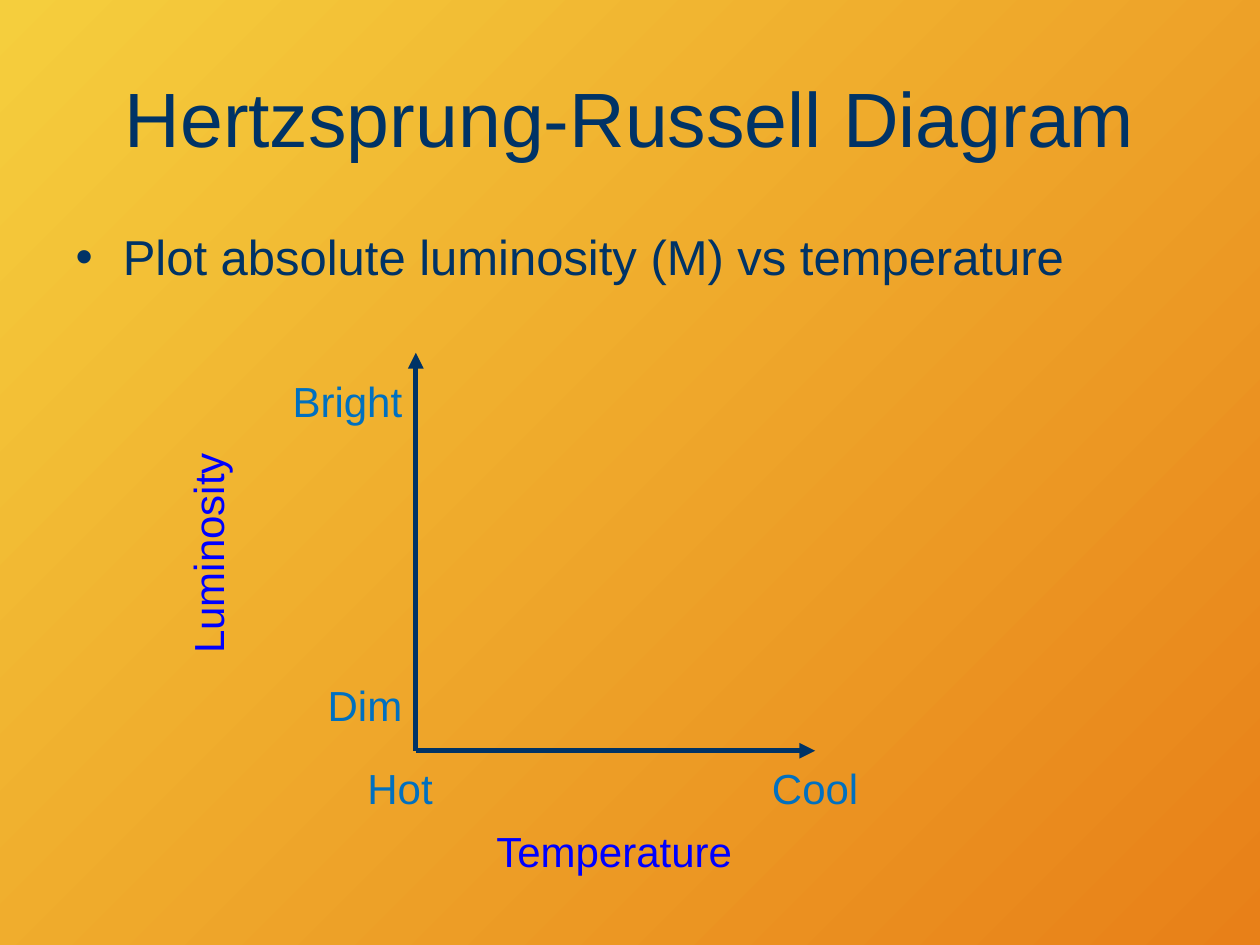
"""Build a slide that introduces the axes of the Hertzsprung-Russell diagram."""
from dataclasses import dataclass

from lxml import etree
from pptx import Presentation
from pptx.dml.color import RGBColor
from pptx.enum import shapes, text
from pptx.oxml import ns
from pptx.util import Pt

FONT = "Arial"
COLORS = {
    "yellow": "F5CE3D",
    "orange": "E88018",
    "navy": "003366",
    "axis_name": "0000FF",
    "axis_end": "0070C0",
}
ORIGIN = (237.6, 429)
LABEL_HEIGHT = 36
ALIGN = text.PP_ALIGN


@dataclass(frozen=True)
class Label:
    """A one-line axis label, placed in points."""
    words: str
    left: float
    top: float
    width: float
    color: str
    align: text.PP_ALIGN = ALIGN.LEFT
    rotation: float = 0


LABELS = [
    Label("Temperature", 276.5, 468, 150.5, "axis_name"),
    Label("Luminosity", 53.3, 297.5, 130.3, "axis_name", rotation=270),
    Label("Bright", 159, 211, 78, "axis_end", ALIGN.RIGHT),
    Label("Dim", 179.4, 384.5, 57.6, "axis_end", ALIGN.RIGHT),
    Label("Hot", 202.3, 432, 52.6, "axis_end", ALIGN.CENTER),
    Label("Cool", 433.4, 432, 64.8, "axis_end", ALIGN.CENTER),
]
AXIS_TIPS = [(ORIGIN[0], 201.6), (465.8, ORIGIN[1])]


def rgb(name: str) -> RGBColor:
    """Return a palette colour."""
    return RGBColor.from_string(COLORS[name])


def add_run(p, words: str, size: float, color: str) -> None:
    """Append a formatted run to a paragraph."""
    r = p.add_run()
    r.text = words
    r.font.name = FONT
    r.font.size = Pt(size)
    r.font.color.rgb = rgb(color)


def fill_placeholder(sp, top: float, words: str, size: float) -> None:
    """Move a full-width placeholder and write its text."""
    sp.left, sp.top, sp.width, sp.height = Pt(36), Pt(top), Pt(648), Pt(90)
    add_run(sp.text_frame.paragraphs[0], words, size, "navy")


def add_axis(s, tip: tuple[float, float]) -> None:
    """Draw an arrow from the origin to the tip."""
    ends = [Pt(v) for v in (*ORIGIN, *tip)]
    sp = s.shapes.add_connector(shapes.MSO_CONNECTOR.STRAIGHT, *ends)
    sp.line.color.rgb = rgb("navy")
    sp.line.width = Pt(3)
    props = sp._element.spPr
    etree.SubElement(props.find(ns.qn("a:ln")), ns.qn("a:tailEnd"), type="triangle")
    etree.SubElement(props, ns.qn("a:effectLst"))


def add_label(s, label: Label) -> None:
    """Add an axis label as a text box."""
    sp = s.shapes.add_textbox(
        Pt(label.left), Pt(label.top), Pt(label.width), Pt(LABEL_HEIGHT))
    sp.rotation = label.rotation
    tf = sp.text_frame
    tf.word_wrap = False
    tf.auto_size = text.MSO_AUTO_SIZE.SHAPE_TO_FIT_TEXT
    p = tf.paragraphs[0]
    p.alignment = label.align
    add_run(p, label.words, 24, label.color)


def paint_background(s) -> None:
    """Fill the background with a diagonal gradient."""
    fill = s.background.fill
    fill.gradient()
    fill.gradient_angle = 315
    for stop, position, color in zip(fill.gradient_stops, (0, 1), ("yellow", "orange")):
        stop.position = position
        stop.color.rgb = rgb(color)


def main() -> None:
    """Create and save the presentation."""
    prs = Presentation()
    prs.slide_width, prs.slide_height = Pt(720), Pt(540)
    s = prs.slides.add_slide(prs.slide_layouts[1])
    paint_background(s)
    fill_placeholder(s.shapes.title, 21.6, "Hertzsprung-Russell Diagram", 44)
    fill_placeholder(
        s.placeholders[1], 126, "Plot absolute luminosity (M) vs temperature", 28)
    for tip in AXIS_TIPS:
        add_axis(s, tip)
    for label in LABELS:
        add_label(s, label)
    prs.save("out.pptx")


if __name__ == "__main__":
    main()
